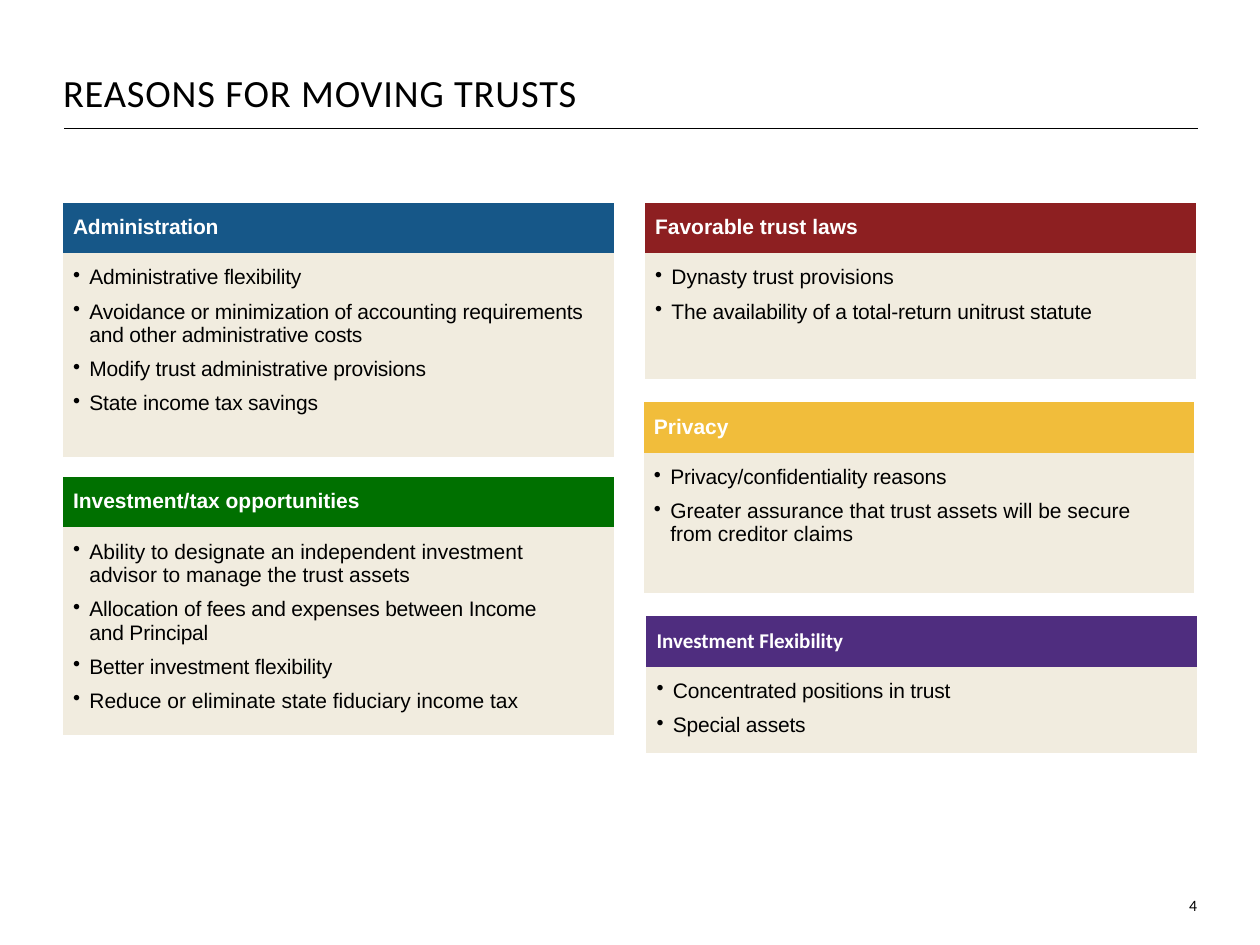
from dataclasses import dataclass

from lxml import etree
from pptx import Presentation
from pptx.dml.color import RGBColor
from pptx.enum import shapes, text
from pptx.oxml import ns
from pptx.util import Pt

BLACK = RGBColor(0x00, 0x00, 0x00)
WHITE = RGBColor(0xFF, 0xFF, 0xFF)
CREAM = RGBColor(0xF1, 0xEC, 0xDF)
BLUE = RGBColor(0x16, 0x57, 0x88)
RED = RGBColor(0x8D, 0x1F, 0x21)
GREEN = RGBColor(0x00, 0x70, 0x00)
GOLD = RGBColor(0xF1, 0xBD, 0x3B)
PURPLE = RGBColor(0x4F, 0x2D, 0x7F)

NO_STYLE = "{2D5ABB26-0587-4C30-8999-92F81FD0307C}"
LEFT = 36
PANEL_WIDTH = 314.6
HEADING_HEIGHT = 28
BULLET_INDENT = 9.36
TIGHT = -0.1
FRAME = {"margin_left": 0, "margin_top": 0, "margin_right": 0, "margin_bottom": 0,
         "vertical_anchor": text.MSO_ANCHOR.BOTTOM, "word_wrap": True}
CELL = {"margin_left": Pt(5.76), "margin_right": Pt(5.76),
        "margin_top": Pt(7.2), "margin_bottom": Pt(7.2),
        "vertical_anchor": text.MSO_ANCHOR.TOP}


@dataclass
class Reason:
    wording: str
    spacing: float = 0


@dataclass
class Panel:
    left: float
    top: float
    body_height: float
    color: RGBColor
    heading: Reason
    reasons: list[Reason]
    heading_font: str = "Arial"


PANELS = [
    Panel(LEFT, 115.9, 116.6, BLUE, Reason("Administration", TIGHT), [
        Reason("Administrative flexibility", TIGHT),
        Reason("Avoidance or minimization of accounting requirements "
               "and other administrative costs", TIGHT),
        Reason("Modify trust administrative provisions", TIGHT),
        Reason("State income tax savings", TIGHT)]),
    Panel(368.6, 115.9, 72, RED, Reason("Favorable trust laws"), [
        Reason("Dynasty trust provisions"),
        Reason("The availability of a total-return unitrust statute", TIGHT)]),
    Panel(LEFT, 272.5, 116.6, GREEN, Reason("Investment/tax opportunities"), [
        Reason("Ability to designate an independent investment\v"
               "advisor to manage the trust assets"),
        Reason("Allocation of fees and expenses between Income\vand Principal", TIGHT),
        Reason("Better investment flexibility", TIGHT),
        Reason("Reduce or eliminate state fiduciary income tax")]),
    Panel(367.9, 229.9, 80, GOLD, Reason("Privacy"), [
        Reason("Privacy/confidentiality reasons", TIGHT),
        Reason("Greater assurance that trust assets will be secure\v"
               "from creditor claims")]),
    Panel(369.4, 352.1, 47.4, PURPLE, Reason("Investment Flexibility"), [
        Reason("Concentrated positions in trust", TIGHT),
        Reason("Special assets", TIGHT)], "Calibri"),
]


def apply(target, values: dict) -> None:
    for name, value in values.items():
        setattr(target, name, value)


def write(paragraph, wording: str, color: RGBColor, font: str = "Arial",
          size: float = 12, bold: bool = False, spacing: float = 0) -> None:
    paragraph.text = wording
    for run in paragraph.runs:
        apply(run.font, {"name": font, "size": Pt(size), "bold": bold})
        run.font.color.rgb = color
        if spacing:
            run._r.get_or_add_rPr().set("spc", str(round(spacing * 100)))


def add_bullet(paragraph) -> None:
    properties = paragraph._p.get_or_add_pPr()
    properties.set("marL", str(Pt(BULLET_INDENT)))
    properties.set("indent", str(-Pt(BULLET_INDENT)))
    etree.SubElement(properties, ns.qn("a:buChar")).set("char", "•")
    apply(paragraph, {"level": 1, "space_after": Pt(6)})


def draw_panel(slide, panel: Panel) -> None:
    table = slide.shapes.add_table(
        2, 1, Pt(panel.left), Pt(panel.top), Pt(PANEL_WIDTH),
        Pt(HEADING_HEIGHT + panel.body_height)).table
    table._tbl.tblPr.find(ns.qn("a:tableStyleId")).text = NO_STYLE
    table.horz_banding = False
    heights = (HEADING_HEIGHT, panel.body_height)
    for index, (height, fill) in enumerate(zip(heights, (panel.color, CREAM))):
        table.rows[index].height = Pt(height)
        cell = table.cell(index, 0)
        apply(cell, CELL)
        cell.fill.solid()
        cell.fill.fore_color.rgb = fill
    write(table.cell(0, 0).text_frame.paragraphs[0], panel.heading.wording, WHITE,
          panel.heading_font, bold=True, spacing=panel.heading.spacing)
    body = table.cell(1, 0).text_frame
    for index, reason in enumerate(panel.reasons):
        paragraph = body.add_paragraph() if index else body.paragraphs[0]
        add_bullet(paragraph)
        write(paragraph, reason.wording, BLACK, spacing=reason.spacing)


def draw_title(slide) -> None:
    title = slide.shapes.title
    apply(title, {"left": Pt(LEFT), "top": Pt(41), "width": Pt(504), "height": Pt(25.2)})
    apply(title.text_frame, FRAME)
    title.text_frame.auto_size = text.MSO_AUTO_SIZE.SHAPE_TO_FIT_TEXT
    paragraph = title.text_frame.paragraphs[0]
    apply(paragraph, {"alignment": text.PP_ALIGN.LEFT, "line_spacing": 0.95})
    write(paragraph, "REASONS FOR MOVING TRUSTS", BLACK, "Calibri", 22, spacing=0.5)


def draw_rule(slide) -> None:
    rule = slide.shapes.add_connector(
        shapes.MSO_CONNECTOR.STRAIGHT, Pt(36.7), Pt(73.2), Pt(684.7), Pt(73.2))
    rule.line.color.rgb = BLACK
    rule.line.width = Pt(0.5)
    etree.SubElement(rule._element.spPr, ns.qn("a:effectLst"))


def draw_page_number(slide) -> None:
    frame = slide.shapes.add_textbox(Pt(648), Pt(494.6), Pt(36), Pt(28)).text_frame
    apply(frame, FRAME)
    frame.paragraphs[0].alignment = text.PP_ALIGN.RIGHT
    write(frame.paragraphs[0], "4", BLACK, "Calibri", 9)


def main() -> None:
    deck = Presentation()
    apply(deck, {"slide_width": Pt(720), "slide_height": Pt(540)})
    slide = deck.slides.add_slide(deck.slide_layouts[5])
    draw_rule(slide)
    draw_title(slide)
    draw_page_number(slide)
    for panel in PANELS:
        draw_panel(slide, panel)
    deck.save("out.pptx")


if __name__ == "__main__":
    main()
